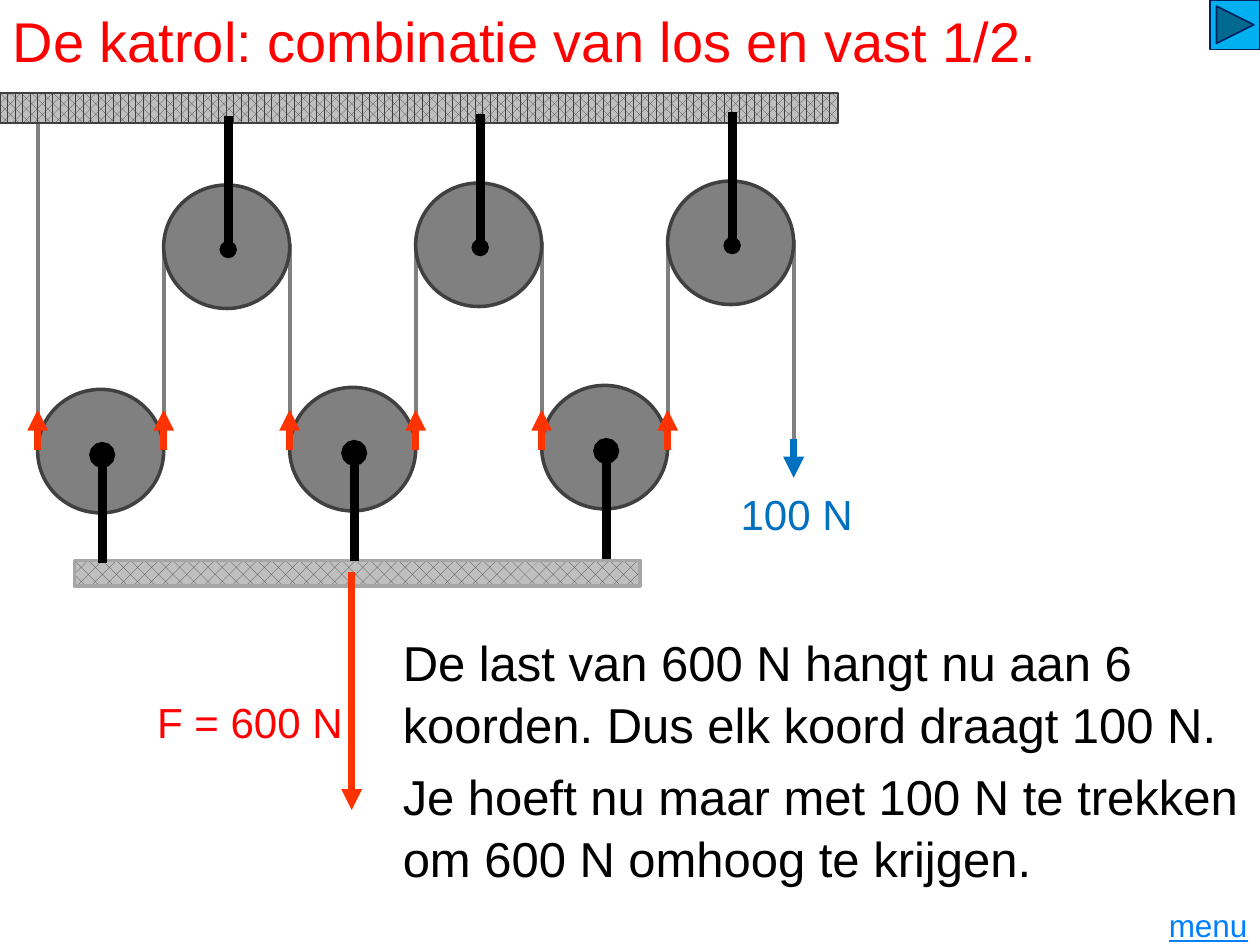
from lxml import etree
from pptx import Presentation
from pptx.dml.color import RGBColor
from pptx.enum.dml import MSO_PATTERN
from pptx.enum.shapes import MSO_CONNECTOR, MSO_SHAPE
from pptx.enum.text import MSO_ANCHOR, MSO_AUTO_SIZE, PP_ALIGN
from pptx.oxml.ns import qn
from pptx.util import Cm, Pt

LEFT, RIGHT = PP_ALIGN.LEFT, PP_ALIGN.RIGHT
TOP, MIDDLE = MSO_ANCHOR.TOP, MSO_ANCHOR.MIDDLE
RECT, OVAL = MSO_SHAPE.RECTANGLE, MSO_SHAPE.OVAL
NEXT_BUTTON = MSO_SHAPE.ACTION_BUTTON_FORWARD_OR_NEXT
STRAIGHT = MSO_CONNECTOR.STRAIGHT
DENSE, SPARSE = MSO_PATTERN.PERCENT_60, MSO_PATTERN.PERCENT_25

COLORS = {
    "red": "FF0000", "force": "FF3300", "pull": "0070C0", "black": "000000",
    "rope": "808080", "dark": "404040", "light": "BFBFBF", "bar_edge": "A6A6A6",
    "button": "00B0F0", "button_edge": "002060", "link": "0080FF",
}

# Content: text, box (left, top, width, height in cm), size, colour, alignment, anchor, line spacing
TITLE = ("De katrol: combinatie van los en vast 1/2.",
         (0, 0, 25.4, 1.63), 32, "red", LEFT, TOP, 1)
LABELS = [
    ("F = 600 N", (2.16, 13.92, 5, 1.27), 24, "red", RIGHT, TOP, 1),
    ("100 N", (14.68, 9.73, 2.95, 1.27), 24, "pull", LEFT, TOP, 1),
    ("De last van 600 N hangt nu aan 6 koorden. Dus elk koord draagt 100 N.",
     (7.87, 12.57, 17.5, 2.64), 28, "black", LEFT, TOP, 1.05),
    ("Je hoeft nu maar met 100 N te trekken om 600 N omhoog te krijgen.",
     (7.87, 15.27, 17.5, 2.64), 28, "black", LEFT, TOP, 1.05),
]
MENU = ("menu", (23.01, 18.14, 2.39, 1.02), 18, "link", RIGHT, MIDDLE, 1)

# Pulley grid in cm: cords hang one wheel apart, everything rises slightly to the right
PAIRS, CORDS = 3, 7
FIRST_CORD, WHEEL_W, WHEEL_H = 0.76, 2.54, 2.49
RISE = 0.02
CEILING_BOTTOM = 2.36
WHEEL_TOP = {"fixed": 3.73, "loose": 7.85}


def color(name):
    return RGBColor.from_string(COLORS[name])


def write(box, label):
    text, place, size, text_color, align, anchor, spacing = label
    box.left, box.top, box.width, box.height = map(Cm, place)
    frame = box.text_frame
    frame.text = text
    frame.word_wrap = True
    frame.auto_size = MSO_AUTO_SIZE.NONE
    frame.vertical_anchor = anchor
    paragraph = frame.paragraphs[0]
    paragraph.alignment = align
    paragraph.line_spacing = spacing
    font = paragraph.runs[0].font
    font.name, font.size = "Arial", Pt(size)
    font.color.rgb = color(text_color)
    return font


def add_label(slide, label):
    return write(slide.shapes.add_textbox(*map(Cm, label[1])), label)


def add_block(slide, kind, place, fill, edge, width, pattern=None):
    block = slide.shapes.add_shape(kind, *map(Cm, place))
    block.shadow.inherit = False
    if pattern:
        block.fill.patterned()
        block.fill.pattern = pattern
        block.fill.fore_color.rgb = color("dark")
        block.fill.back_color.rgb = color(fill)
    else:
        block.fill.solid()
        block.fill.fore_color.rgb = color(fill)
    block.line.color.rgb = color(edge)
    block.line.width = Pt(width)


def add_vertical(slide, x, start, end, line_color, width, tip=None, tip_size="med"):
    """Draw a vertical line; tip is the mark at its end."""
    line = slide.shapes.add_connector(STRAIGHT, Cm(x), Cm(start), Cm(x), Cm(end))
    line.line.color.rgb = color(line_color)
    line.line.width = Pt(width)
    properties = line.line._get_or_add_ln()
    if tip:
        etree.SubElement(properties, qn("a:tailEnd"), type=tip, w=tip_size, len=tip_size)
    etree.SubElement(properties.getparent(), qn("a:effectLst"))


def cord_x(cord):
    return FIRST_CORD + cord * WHEEL_W


def draw_pulleys(slide):
    # Cords, the first one tied to the ceiling
    for cord in range(CORDS):
        lift = RISE * cord
        start = 4.95 - lift if cord else CEILING_BOTTOM
        add_vertical(slide, cord_x(cord), start, 9.04 - lift, "rope", 2.25)

    # Ceiling and load bar
    add_block(slide, RECT, (0, 1.88, 16.89, 0.6), "light", "dark", 1, DENSE)
    add_block(slide, RECT, (1.5, 11.3, 11.4, 0.51), "light", "bar_edge", 2, SPARSE)

    # Loose wheel and fixed wheel of each pair, with their rods
    for pair in range(PAIRS):
        lift = 2 * RISE * pair
        for offset, kind in enumerate(("loose", "fixed")):
            wheel_x = cord_x(2 * pair + offset)
            add_block(slide, OVAL, (wheel_x, WHEEL_TOP[kind] - lift, WHEEL_W, WHEEL_H),
                      "rope", "dark", 2)
            rod_x = wheel_x + WHEEL_W / 2 + 0.03
            if kind == "fixed":
                add_vertical(slide, rod_x, 2.34 - lift, 5.03 - lift, "black", 5, "oval", "sm")
            else:
                add_vertical(slide, rod_x, 11.35 - lift, 9.17 - lift, "black", 5, "oval")


def draw_forces(slide):
    for cord in range(CORDS - 1):
        add_vertical(slide, cord_x(cord), 9.07, 8.26, "force", 4, "triangle")
    add_vertical(slide, cord_x(CORDS - 1), 8.84, 9.63, "pull", 4, "triangle")
    add_vertical(slide, 7.09, 11.53, 16.33, "force", 4, "triangle")


def main():
    deck = Presentation()
    deck.slide_width, deck.slide_height = Cm(25.4), Cm(19.05)
    slide = deck.slides.add_slide(deck.slide_layouts[5])

    write(slide.shapes.title, TITLE)
    draw_pulleys(slide)
    draw_forces(slide)
    for label in LABELS:
        add_label(slide, label)

    # Navigation
    add_block(slide, NEXT_BUTTON, (24.4, 0, 1, 1), "button", "button_edge", 1)
    add_label(slide, MENU).underline = True

    deck.save("out.pptx")


if __name__ == "__main__":
    main()
